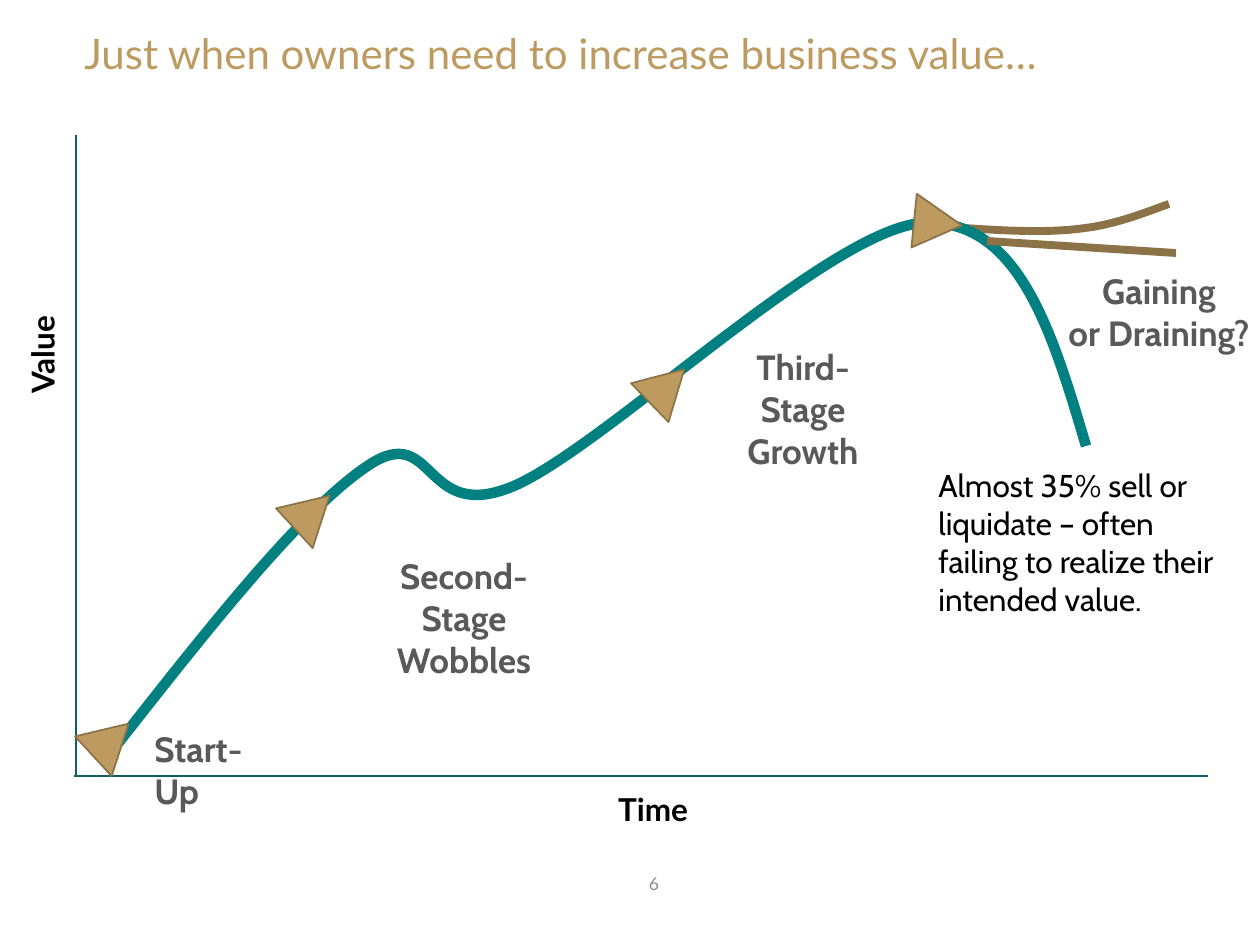
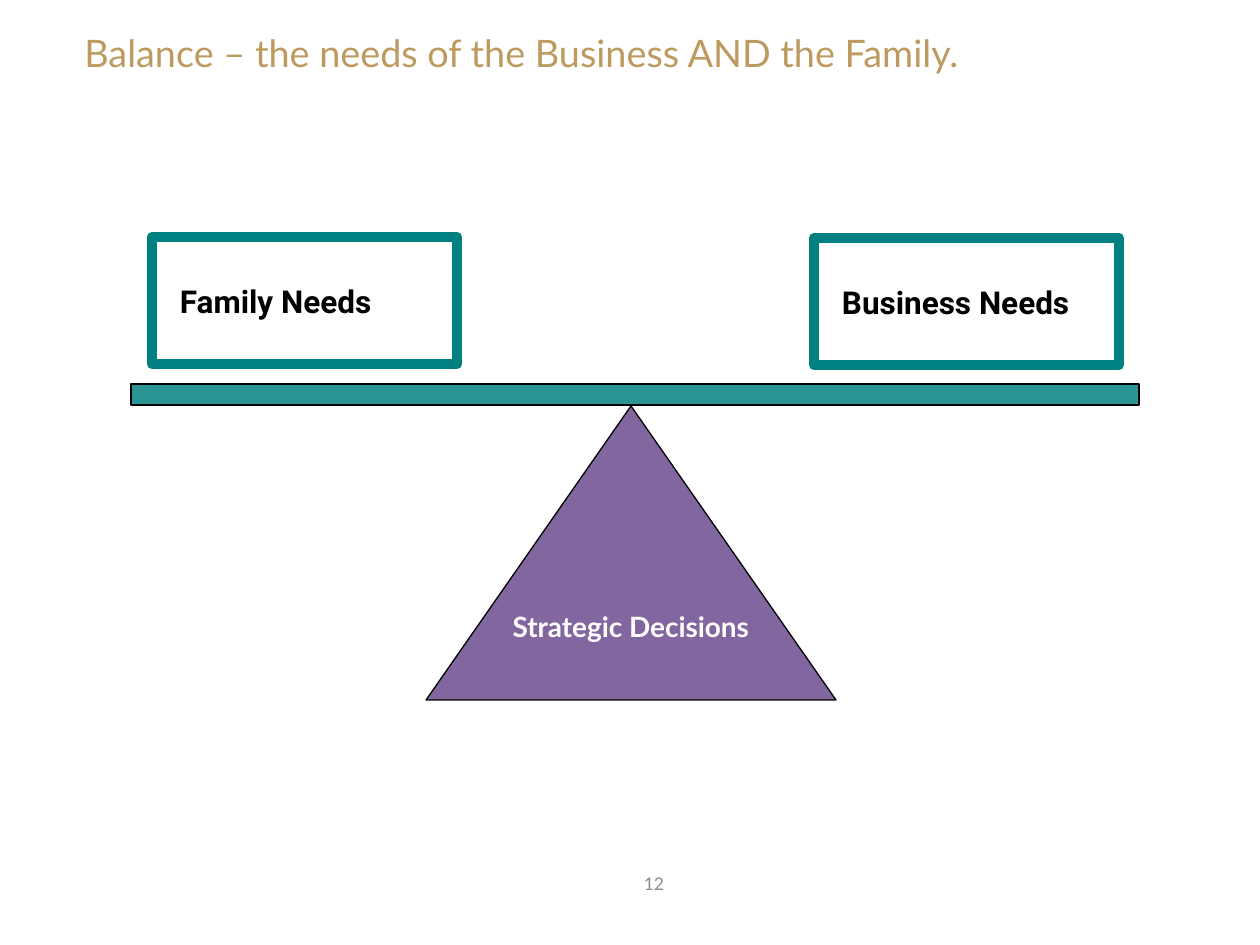
from lxml import etree
from pptx import Presentation
from pptx.dml.color import RGBColor
from pptx.enum.shapes import MSO_CONNECTOR, MSO_SHAPE
from pptx.enum.text import MSO_ANCHOR, PP_ALIGN
from pptx.oxml.ns import qn
from pptx.util import Pt

SCALE = 914400 / 126
WIDE, HIGH = 1260, 945
LEFT, MID = PP_ALIGN.LEFT, PP_ALIGN.CENTER
TOP, CORE = MSO_ANCHOR.TOP, MSO_ANCHOR.MIDDLE
RECT, PEAK = MSO_SHAPE.RECTANGLE, MSO_SHAPE.ISOSCELES_TRIANGLE
STRAIGHT = MSO_CONNECTOR.STRAIGHT

GOLD, BRONZE = "BD9B60", "8C7347"
TEAL, AXIS, PLUM = "008080", "115E67", "68478D"
GREY, PALE, BLACK, WHITE = "595959", "8C8C8C", "000000", "FFFFFF"


def px(*vals):
    """Turn px into EMU."""
    return [round(val * SCALE) for val in vals]


def rgb(code):
    """Turn a hex string into a colour."""
    return RGBColor.from_string(code)


class Deck:
    """Hold the style and the current slide."""

    def __init__(self):
        """Open an empty deck of the right size."""
        self.prs = Presentation()
        self.prs.slide_width, self.prs.slide_height = px(WIDE, HIGH)

    def page(self, title, num, wide, size):
        """Start a slide with its title and number."""
        self.slide = self.prs.slides.add_slide(self.prs.slide_layouts[6])
        self.shapes = self.slide.shapes
        self.text([num], (512, 859, 284, 50), 10, "Lato", PALE, False, MID, CORE)
        head = self.text([title], (72, 26, wide, 59), size, "Lato", GOLD,
                         False, LEFT, CORE)
        head.text_frame.paragraphs[0].line_spacing = 0.9

    def fill_text(self, shape, lines, size, face, color, bold, align, anchor,
                  wrap=True):
        """Put styled paragraphs into a shape."""
        frame = shape.text_frame
        frame.word_wrap = wrap
        frame.vertical_anchor = anchor
        frame.text = "\n".join(lines)
        for para in frame.paragraphs:
            para.alignment = align
            font = para.font
            font.size, font.name, font.bold = Pt(size), face, bold
            font.color.rgb = rgb(color)

    def text(self, lines, box, size, face, color, bold=False, align=LEFT,
             anchor=TOP, turn=0):
        """Add a text box."""
        shape = self.shapes.add_textbox(*px(*box))
        shape.rotation = turn
        self.fill_text(shape, lines, size, face, color, bold, align, anchor)
        return shape

    def label(self, lines, box, align=MID):
        """Add a bold grey stage label."""
        self.text(lines, box, 20, "Cabin", GREY, True, align)

    def paint(self, shape, line, width, fill=None, alpha=100):
        """Set the line, fill and shadow of a shape."""
        shape.shadow.inherit = False
        shape.line.color.rgb = rgb(line)
        shape.line.width = Pt(width)
        if not fill:
            shape.fill.background()
            return
        shape.fill.solid()
        shape.fill.fore_color.rgb = rgb(fill)
        if alpha < 100:
            tint = shape.element.spPr.find(qn("a:solidFill"))[0]
            etree.SubElement(tint, qn("a:alpha"), val=str(alpha * 1000))

    def shape(self, kind, box, line, width, fill=None, alpha=100, turn=0):
        """Add a preset shape."""
        shape = self.shapes.add_shape(kind, *px(*box))
        shape.rotation = turn
        self.paint(shape, line, width, fill, alpha)
        return shape

    def mark(self, x, y, turn):
        """Add a gold arrow tip on the curve."""
        self.shape(PEAK, (x, y, 54, 48), BRONZE, 1, GOLD, turn=turn)

    def need(self, name, x, y):
        """Add a framed load on the beam."""
        shape = self.shape(RECT, (x, y, 305, 127), TEAL, 6)
        self.fill_text(shape, [name], 18, "Roboto", BLACK, True, LEFT, CORE)
        shape.text_frame.margin_left = px(28)[0]

    def line(self, start, end, color, width):
        """Add a straight line."""
        line = self.shapes.add_connector(STRAIGHT, *px(*start, *end))
        line.line.color.rgb = rgb(color)
        line.line.width = Pt(width)
        etree.SubElement(line.element.spPr, qn("a:effectLst"))

    def curve(self, start, points, color, width):
        """Add a chain of Bezier curves, three points to each."""
        form = self.shapes.build_freeform(*start, scale=SCALE)
        form.add_line_segments(points, close=False)
        shape = form.convert_to_shape()
        self.paint(shape, color, width)
        legs = list(shape.element.spPr.iter(qn("a:lnTo")))
        trace = legs[0].getparent()
        for i in range(0, len(legs), 3):
            bend = etree.SubElement(trace, qn("a:cubicBezTo"))
            for leg in legs[i:i + 3]:
                bend.append(leg[0])
                trace.remove(leg)


def growth(deck):
    """Draw the value curve over time."""
    deck.page("Just when owners need to increase business value…", "6", 1133, 24)
    deck.curve((964, 228), [(1008, 231), (1051, 233), (1085, 228),
                            (1119, 224), (1154, 209), (1169, 204)], BRONZE, 4.5)
    deck.curve((112, 751), [(207, 630), (302, 509), (369, 465),
                            (436, 421), (422, 525), (514, 486),
                            (606, 446), (827, 231), (922, 223),
                            (1018, 217), (1052, 331), (1086, 446)], TEAL, 6)
    deck.label(["Start-Up"], (142, 721, 152, 55), LEFT)
    deck.label(["Second-Stage", "Wobbles"], (348, 548, 232, 97))
    deck.label(["Third-Stage", "Growth"], (703, 339, 200, 97))
    deck.label(["Gaining", "or Draining?"], (1054, 263, 210, 97))
    deck.line((76, 135), (76, 776), AXIS, 1.5)
    deck.line((1208, 776), (74, 776), AXIS, 1.5)
    deck.line((987, 241), (1176, 253), BRONZE, 4.5)
    for x, y, turn in [(84, 716, 47.3), (285, 488, 47.3), (640, 362, 46),
                       (911, 199, 95.7)]:
        deck.mark(x, y, turn)
    deck.text(["Time"], (586, 784, 134, 50), 18, "Lato", BLACK, True, MID)
    deck.text(["Value"], (-25, 314, 134, 50), 18, "Lato", BLACK, True, turn=270)
    deck.text(["Almost 35% sell or liquidate – often failing to realize their "
               "intended value."], (926, 460, 325, 204), 18, "Cabin", BLACK)


def balance(deck):
    """Draw the scale of family and business."""
    deck.page("Balance – the needs of the Business AND the Family.", "12", 936, 21.6)
    deck.need("Business Needs", 814, 238)
    deck.shape(RECT, (131, 384, 1008, 21), BLACK, 0.75, TEAL, 83)
    base = deck.shape(PEAK, (426, 406, 410, 294), BLACK, 0.75, PLUM, 83)
    deck.fill_text(base, ["Strategic Decisions"], 16, "Lato", WHITE, True, MID,
                   CORE, wrap=False)
    deck.need("Family Needs", 152, 237)


def main():
    """Build and save the deck."""
    deck = Deck()
    growth(deck)
    balance(deck)
    deck.prs.save("out.pptx")


if __name__ == "__main__":
    main()
